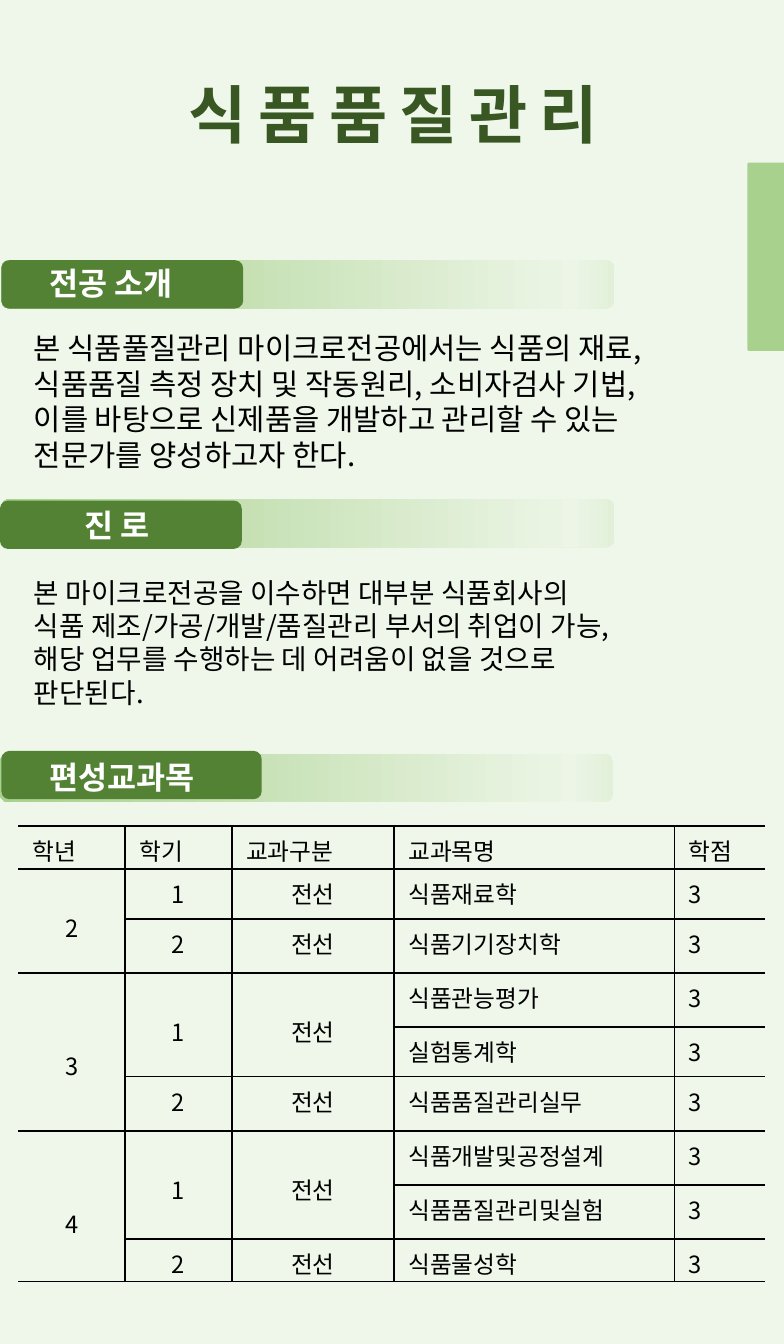
from lxml import etree
from pptx import Presentation
from pptx.dml.color import RGBColor
from pptx.enum.shapes import MSO_SHAPE
from pptx.enum.text import PP_ALIGN
from pptx.oxml import parse_xml
from pptx.oxml.ns import qn
from pptx.util import Inches, Pt

FONT = "Noto Sans CJK KR"
NS = 'xmlns:a="http://schemas.openxmlformats.org/drawingml/2006/main"'
PALE = RGBColor(0xEE, 0xF7, 0xE9)
LIGHT = RGBColor(0xA9, 0xD1, 0x8E)
GREEN = RGBColor(0x54, 0x82, 0x35)
DARK = RGBColor(0x38, 0x57, 0x23)
BLACK = RGBColor(0, 0, 0)
WHITE = RGBColor(255, 255, 255)
FADE = [(0, "E2F0D9"), (7, "ECF5E6"), (10, "EAF4E3"), (100, "A9D18E")]
LEFT, MID = PP_ALIGN.LEFT, PP_ALIGN.CENTER


def write(frame, lines, size, color, bold=False, align=LEFT):
    frame.word_wrap = True
    for i, line in enumerate(lines):
        para = frame.paragraphs[0] if i == 0 else frame.add_paragraph()
        para.alignment = align
        run = para.add_run()
        run.text = line
        run.font.size = Pt(size)
        run.font.bold = bold
        run.font.name = FONT
        run.font.color.rgb = color
        east = etree.SubElement(run.font._element, qn("a:ea"))
        east.set("typeface", FONT)


def add_bar(parent, kind, x, y, w, h):
    bar = parent.shapes.add_shape(kind, Inches(x), Inches(y), Inches(w), Inches(h))
    bar.shadow.inherit = False
    bar.line.fill.background()
    bar.fill.solid()
    return bar


prs = Presentation()
prs.slide_width, prs.slide_height = Inches(5.51), Inches(9.45)
slide = prs.slides.add_slide(prs.slide_layouts[6])
slide.background.fill.solid()
slide.background.fill.fore_color.rgb = PALE

# Side tab running off the right edge
side = add_bar(slide, MSO_SHAPE.PENTAGON, 5.26, 1.15, 4.55, 1.31)
side.fill.fore_color.rgb = LIGHT
side.line.color.rgb = LIGHT
side.line.width = Pt(1)

# Title with wide letter spacing and a soft shadow
title = slide.shapes.add_textbox(Inches(0.01), Inches(0.48), Inches(5.51), Inches(0.64))
write(title.text_frame, ["식품품질관리"], 32, DARK, True, MID)
props = title.text_frame.paragraphs[0].runs[0].font._element
props.set("spc", "600")
props.find(qn("a:solidFill")).addnext(parse_xml(
    f'<a:effectLst {NS}><a:outerShdw blurRad="38100" dist="38100" dir="2700000" algn="tl">'
    '<a:srgbClr val="000000"><a:alpha val="43000"/></a:srgbClr></a:outerShdw></a:effectLst>'))

# Section headings: fading bar, dark tab, label
heads = [
    ("전공 소개", (0.01, 1.83), (0.01, 1.83, 1.7), (0.25, 1.81, 1.31), LEFT),
    ("진 로", (0.01, 3.51), (0, 3.52, 1.7), (0.13, 3.51, 1.39), MID),
    ("편성교과목", (0, 5.3), (0.01, 5.28, 1.83), (0.25, 5.28, 1.46), LEFT),
]
for text, fade, tab, label, align in heads:
    group = slide.shapes.add_group_shape()
    bar = group.shapes.add_shape(MSO_SHAPE.ROUNDED_RECTANGLE, Inches(fade[0]),
                                 Inches(fade[1]), Inches(4.31), Inches(0.34))
    bar.shadow.inherit = False
    bar.line.fill.background()
    bar.fill.gradient()
    bar.fill.gradient_angle = 180
    stops = bar._element.spPr.find(qn("a:gradFill")).find(qn("a:gsLst"))
    for stop in list(stops):
        stops.remove(stop)
    for pos, color in FADE:
        stop = etree.SubElement(stops, qn("a:gs"), pos=str(pos * 1000))
        etree.SubElement(stop, qn("a:srgbClr"), val=color)
    add_bar(group, MSO_SHAPE.ROUNDED_RECTANGLE, *tab, 0.34).fill.fore_color.rgb = GREEN
    x, y, w = label
    box = group.shapes.add_textbox(Inches(x), Inches(y), Inches(w), Inches(0.37))
    write(box.text_frame, [text], 16, WHITE, True, align)

# Body text
bodies = [
    (2.27, 5.03, 1.11, 15, [
        "본 식품풀질관리 마이크로전공에서는 식품의 재료,",
        "식품품질 측정 장치 및 작동원리, 소비자검사 기법,",
        "이를 바탕으로 신제품을 개발하고 관리할 수 있는",
        "전문가를 양성하고자 한다."]),
    (4, 4.62, 1.04, 14, [
        "본 마이크로전공을 이수하면 대부분 식품회사의",
        "식품 제조/가공/개발/품질관리 부서의 취업이 가능,",
        "해당 업무를 수행하는 데 어려움이 없을 것으로",
        "판단된다."]),
]
for y, w, h, size, lines in bodies:
    box = slide.shapes.add_textbox(Inches(0.14), Inches(y), Inches(w), Inches(h))
    box.text_frame.margin_right = 0
    write(box.text_frame, lines, size, BLACK)

# Course table: None marks a cell covered by the one above
rows = [
    ("학년", "학기", "교과구분", "교과목명", "학점"),
    ("2", "1", "전선", "식품재료학", "3"),
    (None, "2", "전선", "식품기기장치학", "3"),
    ("3", "1", "전선", "식품관능평가", "3"),
    (None, None, None, "실험통계학", "3"),
    (None, "2", "전선", "식품품질관리실무", "3"),
    ("4", "1", "전선", "식품개발및공정설계", "3"),
    (None, None, None, "식품품질관리및실험", "3"),
    (None, "2", "전선", "식품물성학", "3"),
]
widths = [0.75, 0.75, 1.14, 1.97, 0.64]
heights = [0.3, 0.35, 0.38, 0.38, 0.35, 0.38, 0.38, 0.38, 0.3]
table = slide.shapes.add_table(len(rows), len(widths), Inches(0.13), Inches(5.81),
                               Inches(5.25), Inches(sum(heights))).table
table.first_row = table.horz_banding = False
for col, w in zip(table.columns, widths):
    col.width = Inches(w)
for row, h in zip(table.rows, heights):
    row.height = Inches(h)

for r, row in enumerate(rows):
    for c, text in enumerate(row):
        cell = table.cell(r, c)
        cell.fill.background()
        bare = {0: "L", len(widths) - 1: "R"}.get(c)
        for k, edge in enumerate("LRTB"):
            paint = ("<a:noFill/>" if edge == bare else
                     '<a:solidFill><a:srgbClr val="000000"/></a:solidFill>')
            cell._tc.get_or_add_tcPr().insert(
                k, parse_xml(f'<a:ln{edge} {NS} w="12700">{paint}</a:ln{edge}>'))
        if text is None:
            continue
        write(cell.text_frame, [text], 12, BLACK, align=MID if r and c < 3 else LEFT)
        last = r
        while r and last + 1 < len(rows) and rows[last + 1][c] is None:
            last += 1
        if last > r:
            cell.merge(table.cell(last, c))
            cell.margin_top = Inches(0.05 + 0.24 * (last - r))

prs.save("out.pptx")
